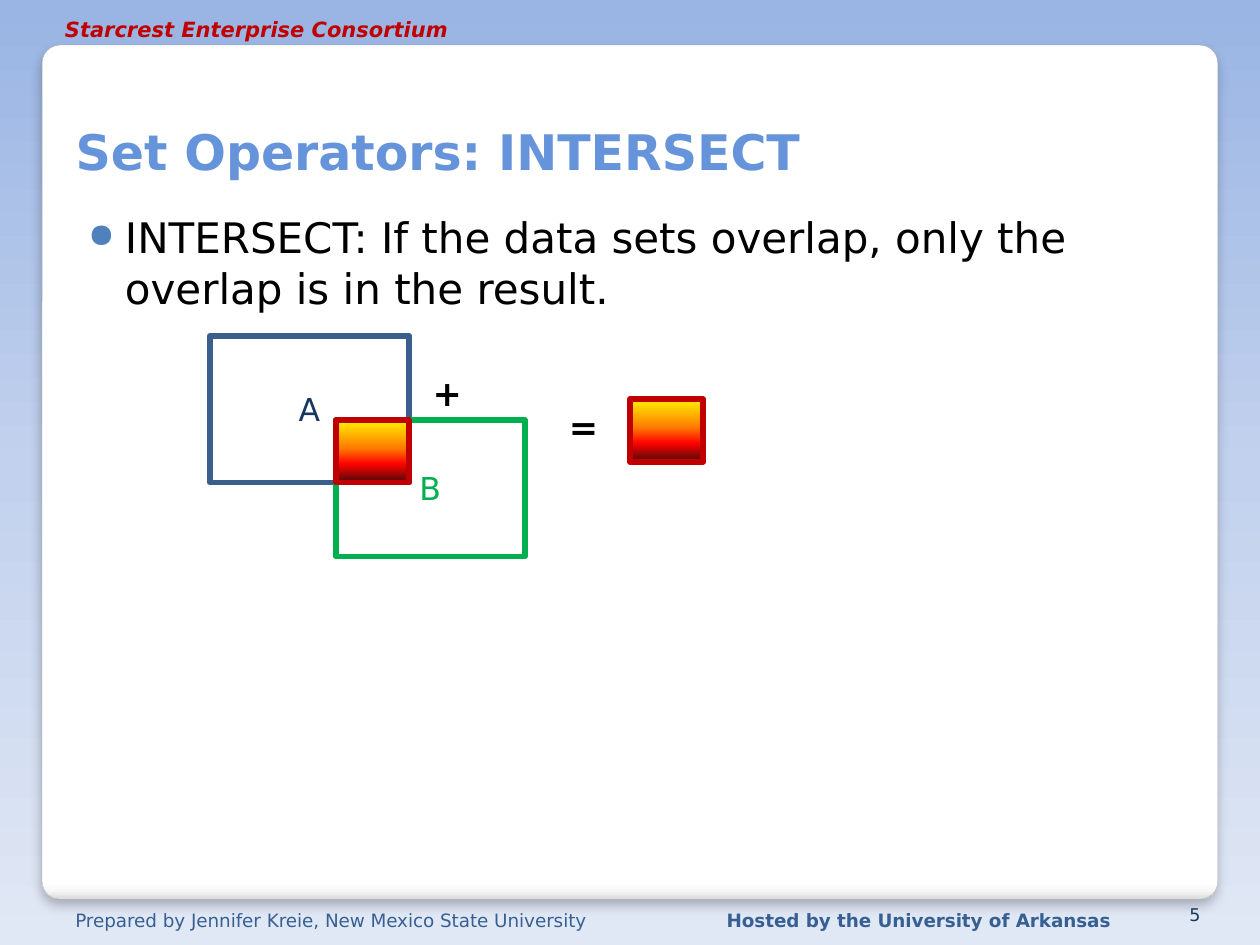
from lxml import etree
from pptx import Presentation
from pptx.dml.color import RGBColor
from pptx.enum.shapes import MSO_SHAPE
from pptx.enum.text import MSO_ANCHOR, PP_ALIGN
from pptx.oxml import parse_xml
from pptx.oxml.ns import nsdecls, qn
from pptx.util import Cm, Pt

FONT = "DejaVu Sans"
BLACK = RGBColor(0x00, 0x00, 0x00)
NAVY = RGBColor(0x17, 0x37, 0x5E)
FOOTER_BLUE = RGBColor(0x37, 0x60, 0x92)
TITLE_BLUE = RGBColor(0x65, 0x94, 0xDA)
SET_A_BLUE = RGBColor(0x3A, 0x5F, 0x8C)
SET_B_GREEN = RGBColor(0x00, 0xB0, 0x50)
RED = RGBColor(0xC0, 0x00, 0x00)
PANEL_EDGE = RGBColor(0xA4, 0xA4, 0xA4)
BULLET_BLUE = RGBColor(0x4F, 0x81, 0xBD)
SKY = [(0, RGBColor(0x9A, 0xB5, 0xE4)), (50, RGBColor(0xC2, 0xD1, 0xED)),
       (100, RGBColor(0xE1, 0xE8, 0xF5))]
PAPER = [(0, RGBColor(0xFF, 0xFF, 0xFF)), (98, RGBColor(0xFF, 0xFF, 0xFF)),
         (99, RGBColor(0xF7, 0xF7, 0xF7)), (100, RGBColor(0xDA, 0xDA, 0xDA))]
FIRE = [(0, RGBColor(0xFF, 0xF2, 0x00)), (45, RGBColor(0xFF, 0x7A, 0x00)),
        (70, RGBColor(0xFF, 0x03, 0x00)), (100, RGBColor(0x4D, 0x08, 0x08))]


def fill_downward(fill, element, stops):
    """Give the fill inside element a top-to-bottom gradient of (percent, colour) stops."""
    fill.gradient()
    fill.gradient_angle = 270
    stop_list = next(element.iter(qn("a:gsLst")))
    for old_stop in list(stop_list):
        stop_list.remove(old_stop)
    for percent, color in stops:
        stop = etree.SubElement(stop_list, qn("a:gs"), pos=str(percent * 1000))
        etree.SubElement(stop, qn("a:srgbClr"), val=str(color))


def write(shape, text, size, color, bold=False, align=PP_ALIGN.LEFT, anchor=MSO_ANCHOR.TOP):
    frame = shape.text_frame
    frame.word_wrap = True
    frame.vertical_anchor = anchor
    paragraph = frame.paragraphs[0]
    paragraph.text = text
    paragraph.alignment = align
    paragraph.font.name = FONT
    paragraph.font.size = Pt(size)
    paragraph.font.bold = bold
    paragraph.font.color.rgb = color
    return paragraph


prs = Presentation()
prs.slide_width, prs.slide_height = Cm(25.4), Cm(19.05)
slide = prs.slides.add_slide(prs.slide_layouts[5])
fill_downward(slide.background.fill, slide.element, SKY)

# Title
title = slide.shapes.title
title.left, title.top, title.width, title.height = Cm(1.27), Cm(0.85), Cm(22.73), Cm(2.91)
write(title, "Set Operators: INTERSECT", 28, TITLE_BLUE, bold=True, anchor=MSO_ANCHOR.BOTTOM)

# White panel, behind the title
panel = slide.shapes.add_shape(MSO_SHAPE.ROUNDED_RECTANGLE,
                               Cm(0.85), Cm(0.91), Cm(23.7), Cm(17.22))
panel.adjustments[0] = 0.021
fill_downward(panel.fill, panel.element, PAPER)
panel.line.color.rgb = PANEL_EDGE
panel.line.width = Pt(0.16)
panel.shadow.inherit = False
next(panel.element.iter(qn("a:effectLst"))).append(parse_xml(
    f'<a:outerShdw {nsdecls("a")} blurRad="{Pt(6)}" dist="{Pt(4)}" dir="5400000" rotWithShape="0">'
    '<a:srgbClr val="000000"><a:alpha val="25000"/></a:srgbClr></a:outerShdw>'))
title.element.addprevious(panel.element)

# Header, footers and slide number
for text, left, top, width, size, color, bold, italic, align, anchor in [
    ("Prepared by Jennifer Kreie, New Mexico State University", 1.27, 18.2, 11.33,
     10.5, FOOTER_BLUE, False, False, PP_ALIGN.LEFT, MSO_ANCHOR.TOP),
    ("Hosted by the University of Arkansas", 14.4, 18.2, 8.46,
     10.5, FOOTER_BLUE, True, False, PP_ALIGN.LEFT, MSO_ANCHOR.TOP),
    ("Starcrest Enterprise Consortium", 1.06, 0.21, 8.46,
     12, RED, True, True, PP_ALIGN.LEFT, MSO_ANCHOR.TOP),
    ("5", 23.18, 18.2, 1.27,
     10, NAVY, False, False, PP_ALIGN.RIGHT, MSO_ANCHOR.BOTTOM),
]:
    margin_note = slide.shapes.add_textbox(Cm(left), Cm(top), Cm(width), Cm(0.58))
    write(margin_note, text, size, color, bold, align, anchor).font.italic = italic

# Definition
definition = slide.shapes.add_textbox(Cm(1.27), Cm(4.02), Cm(22.73), Cm(12.7))
definition.text_frame.margin_left = Cm(0.51)
definition.text_frame.margin_top = Cm(0.25)
bullet = write(definition,
               "INTERSECT: If the data sets overlap, only the overlap is in the result.",
               24, BLACK)
bullet.space_before = Pt(2.5)
bullet_format = bullet._p.get_or_add_pPr()
bullet_format.set("marL", str(Cm(0.74)))
bullet_format.set("indent", str(-Cm(0.74)))
bullet_parts = [
    f'<a:buClr {nsdecls("a")}><a:srgbClr val="{BULLET_BLUE}"/></a:buClr>',
    f'<a:buSzPct {nsdecls("a")} val="80000"/>',
    f'<a:buChar {nsdecls("a")} char="●"/>',
]
first_default = bullet_format.find(qn("a:defRPr"))
for part in bullet_parts:
    first_default.addprevious(parse_xml(part))

# Diagram: A + B = overlap
diagram = slide.shapes.add_group_shape().shapes
a_left, a_top, a_width, a_height = 4.23, 6.77, 4.02, 2.96
b_left, b_top, b_width, b_height = 6.77, 8.47, 3.81, 2.75
overlap_width = a_left + a_width - b_left
overlap_height = a_top + a_height - b_top

for name, left, top, width, height, edge, color in [
    ("A", a_left, a_top, a_width, a_height, SET_A_BLUE, NAVY),
    ("B", b_left, b_top, b_width, b_height, SET_B_GREEN, SET_B_GREEN),
]:
    data_set = diagram.add_shape(MSO_SHAPE.RECTANGLE, Cm(left), Cm(top), Cm(width), Cm(height))
    data_set.shadow.inherit = False
    data_set.fill.background()
    data_set.line.color.rgb = edge
    data_set.line.width = Pt(3.35)
    write(data_set, name, 18, color, align=PP_ALIGN.CENTER, anchor=MSO_ANCHOR.MIDDLE)

for sign, left, top in [("+", 8.47, 7.37), ("=", 11.22, 8.05)]:
    operator = diagram.add_textbox(Cm(left), Cm(top), Cm(1.69), Cm(1.11))
    write(operator, sign, 20, BLACK, bold=True)

for left, top in [(b_left, b_top), (12.7, 8.05)]:
    overlap = diagram.add_shape(MSO_SHAPE.RECTANGLE, Cm(left), Cm(top),
                                Cm(overlap_width), Cm(overlap_height))
    overlap.shadow.inherit = False
    fill_downward(overlap.fill, overlap.element, FIRE)
    overlap.line.color.rgb = RED
    overlap.line.width = Pt(3.35)

prs.save("out.pptx")
